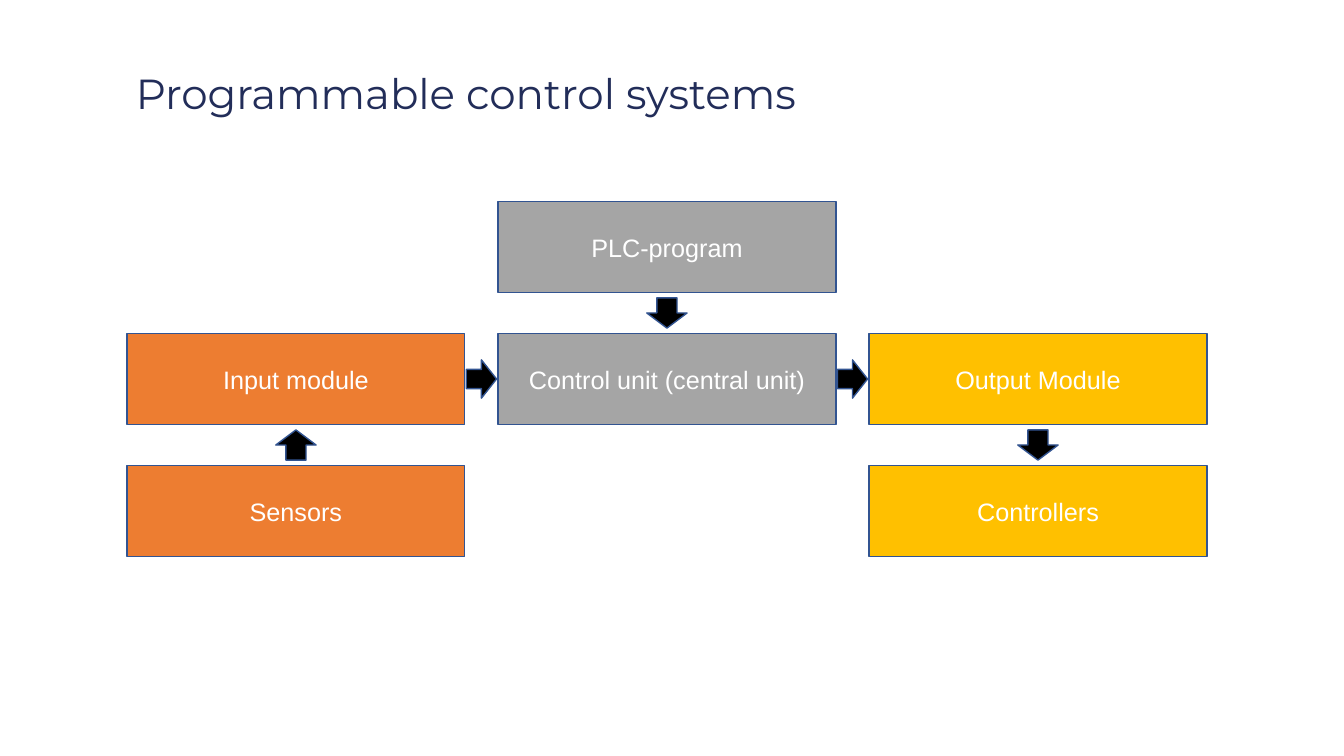
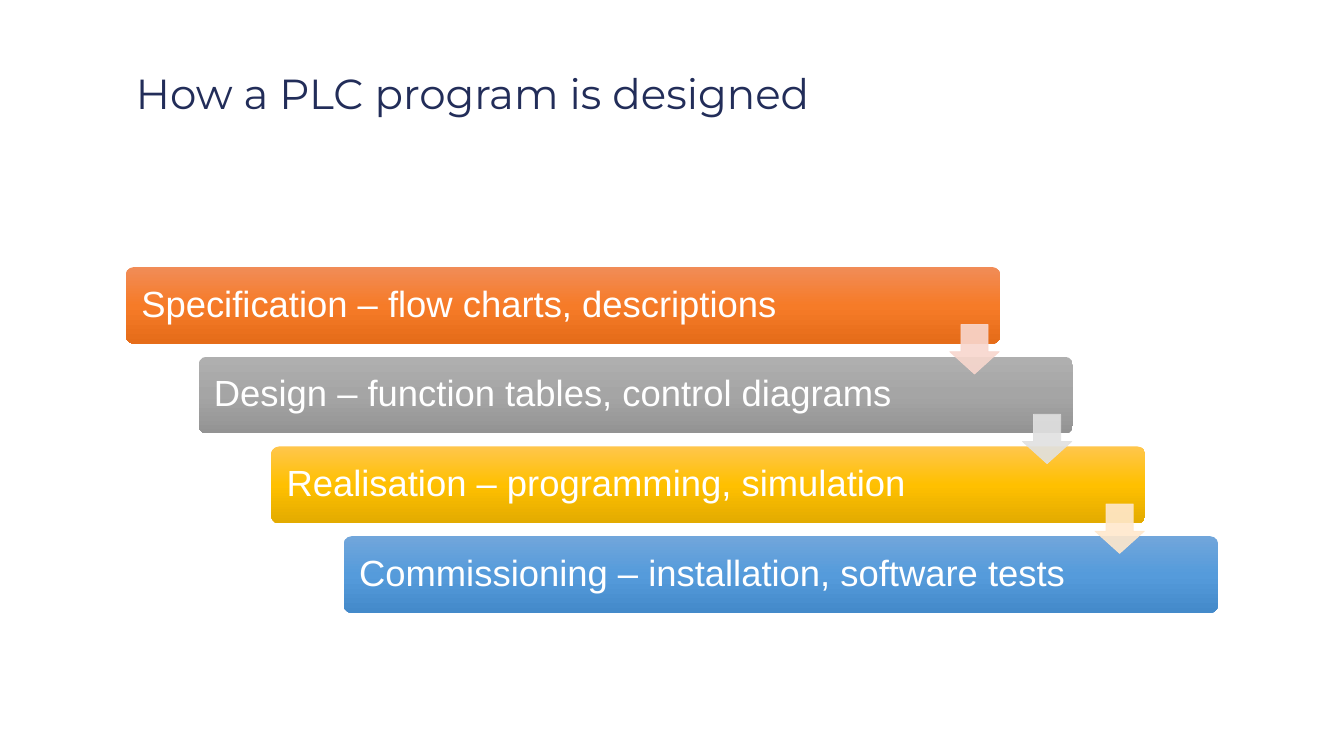
import copy

import pptx
import pptx.dml.color
import pptx.enum.shapes
import pptx.enum.text
import pptx.oxml.ns
import pptx.util
from lxml import etree

Inches, Pt = pptx.util.Inches, pptx.util.Pt
SHAPE = pptx.enum.shapes.MSO_SHAPE
ALIGN = pptx.enum.text.PP_ALIGN
qn = pptx.oxml.ns.qn
rgb = pptx.dml.color.RGBColor.from_string

NAVY, WHITE, BLACK, OUTLINE = "222D59", "FFFFFF", "000000", "325491"
ORANGE, GREY, YELLOW = "ED7D31", "A5A5A5", "FFC000"


def write(s, text, size, font, color, align, spacing=1.0):
    tf = s.text_frame
    tf.word_wrap = True
    p = tf.paragraphs[0]
    p.text = text
    p.alignment = align
    p.line_spacing = spacing
    f = p.runs[0].font
    f.size, f.name, f.color.rgb = Pt(size), font, rgb(color)


def add_shape(slide, kind, x, y, w, h, fill=None, line=None, width=1):
    s = slide.shapes.add_shape(kind, Inches(x), Inches(y), Inches(w), Inches(h))
    s.shadow.inherit = False
    if fill:
        s.fill.solid()
        s.fill.fore_color.rgb = rgb(fill)
    if line:
        s.line.color.rgb = rgb(line)
        s.line.width = Pt(width)
    else:
        s.line.fill.background()
    return s


prs = pptx.Presentation()
prs.slide_width, prs.slide_height = Inches(13.33), Inches(7.5)

# Slides with their titles
slides = []
for title in ("Programmable control systems", "How a PLC program is designed"):
    slide = prs.slides.add_slide(prs.slide_layouts[6])
    tb = slide.shapes.add_textbox(Inches(1.25), Inches(0.68), Inches(10.83), Inches(1.62))
    write(tb, title, 30, "Montserrat", NAVY, ALIGN.LEFT, 0.9)
    slides.append(slide)
system, design = slides

# Block diagram: boxes on a grid of three columns and three rows
LEFT, TOP, COL, ROW = 1.26, 2.0, 3.68, 1.31
BOX_W, BOX_H = 3.35, 0.9
for text, col, row, color in (
    ("Input module", 0, 1, ORANGE),
    ("Control unit (central unit)", 1, 1, GREY),
    ("Output Module", 2, 1, YELLOW),
    ("Sensors", 0, 2, ORANGE),
    ("Controllers", 2, 2, YELLOW),
    ("PLC-program", 1, 0, GREY),
):
    s = add_shape(system, SHAPE.RECTANGLE, LEFT + col * COL, TOP + row * ROW,
                  BOX_W, BOX_H, color, OUTLINE)
    s.text_frame.vertical_anchor = pptx.enum.text.MSO_ANCHOR.MIDDLE
    write(s, text, 18, "Arial", WHITE, ALIGN.CENTER)

# Arrows across the gaps between columns
for col in (0, 1):
    x = LEFT + col * COL + (BOX_W + COL) / 2
    y = TOP + ROW + BOX_H / 2
    add_shape(system, SHAPE.RIGHT_ARROW, x - 0.15, y - 0.19, 0.3, 0.38, BLACK, OUTLINE)

# Arrows across the gaps between rows
for col, row, turn in ((1, 0, 0), (0, 1, 180), (2, 1, 0)):
    x = LEFT + col * COL + BOX_W / 2
    y = TOP + row * ROW + (BOX_H + ROW) / 2
    s = add_shape(system, SHAPE.DOWN_ARROW, x - 0.2, y - 0.15, 0.4, 0.3, BLACK, OUTLINE)
    s.rotation = turn

# Staircase of gradient bars
STEP_X, STEP_Y, BAR_W, BAR_H = 0.72, 0.89, 8.67, 0.76
steps = (
    ("Specification – flow charts, descriptions", ("F18C57", "F67B28", "E56C19")),
    ("Design – function tables, control diagrams", ("AFAFAF", "A5A5A5", "939393")),
    ("Realisation – programming, simulation", ("FFC64B", "FFC000", "E3AB00")),
    ("Commissioning – installation, software tests", ("71A6DB", "559BDB", "448ACA")),
)
for i, (text, colors) in enumerate(steps):
    s = add_shape(design, SHAPE.ROUNDED_RECTANGLE, 1.25 + i * STEP_X, 2.65 + i * STEP_Y,
                  BAR_W, BAR_H)
    s.adjustments[0] = 0.1
    s.fill.gradient()
    s.fill.gradient_angle = 270
    stops = s._element.spPr.find(qn("a:gradFill")).find(qn("a:gsLst"))
    stops.append(copy.deepcopy(stops[0]))
    for stop, position, color in zip(s.fill.gradient_stops, (0, 0.5, 1), colors):
        stop.position = position
        stop.color.rgb = rgb(color)
    tf = s.text_frame
    tf.vertical_anchor = pptx.enum.text.MSO_ANCHOR.MIDDLE
    tf.margin_left = Inches(0.13)
    write(s, text, 26, "Arial", WHITE, ALIGN.LEFT, 0.9)

# Translucent arrows from each bar to the next
for i, color in enumerate(("F8D7CE", "E1E1E1", "FFE8CC")):
    s = add_shape(design, SHAPE.DOWN_ARROW, 9.42 + i * STEP_X, 3.22 + i * STEP_Y,
                  0.49, 0.49, color, color, 0.5)
    s.adjustments[0], s.adjustments[1] = 0.55, 0.45
    for clr in s._element.spPr.iter(qn("a:srgbClr")):
        etree.SubElement(clr, qn("a:alpha")).set("val", "90000")

prs.save("out.pptx")
